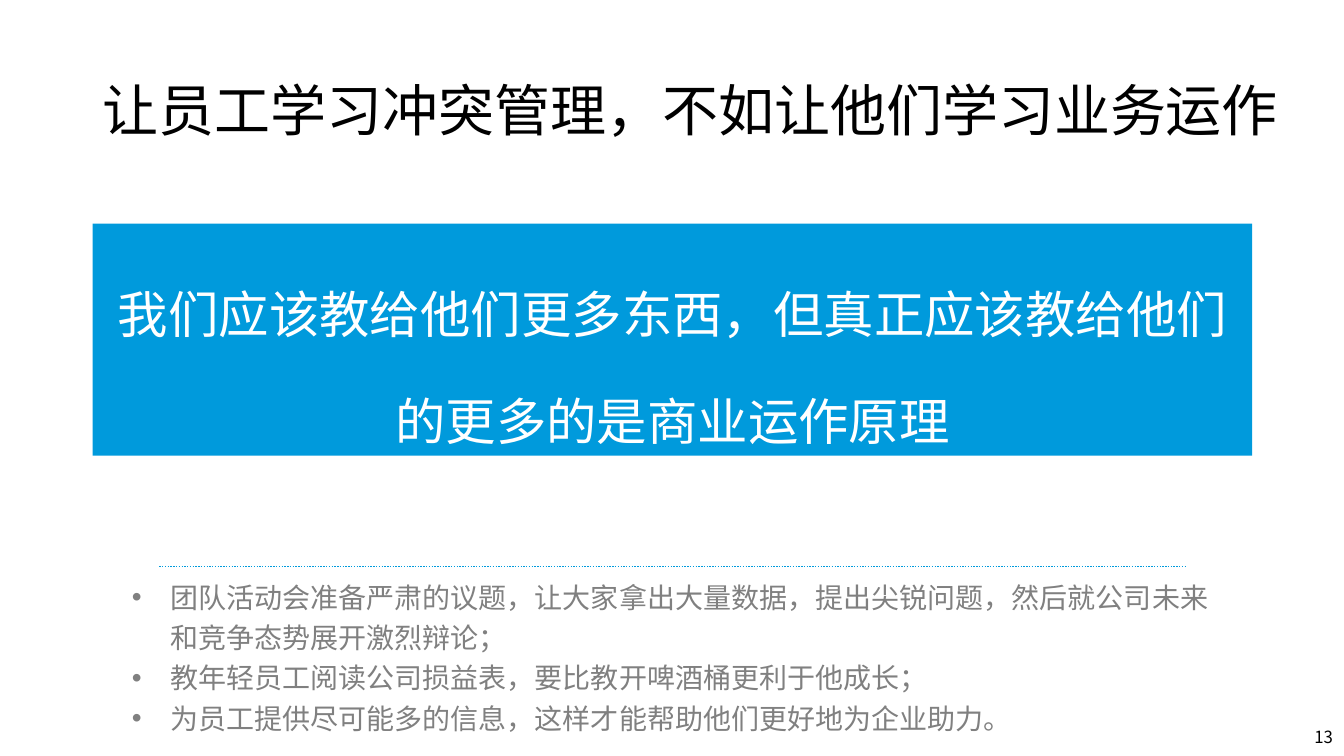
from lxml.etree import SubElement
from pptx import Presentation
from pptx.dml.color import RGBColor
from pptx.enum.dml import MSO_LINE
from pptx.enum.shapes import MSO_CONNECTOR, MSO_SHAPE
from pptx.enum.text import MSO_ANCHOR, MSO_AUTO_SIZE, PP_ALIGN
from pptx.oxml.ns import qn
from pptx.util import Inches, Pt

WIDTH, HEIGHT = Inches(13.33), Inches(7.5)
LEFT = 0.92
BLUE = "009ADC"
CJK_FONT = "Noto Sans CJK SC"
POINTS = [
    "团队活动会准备严肃的议题，让大家拿出大量数据，提出尖锐问题，然后就公司未来和竞争态势展开激烈辩论；",
    "教年轻员工阅读公司损益表，要比教开啤酒桶更利于他成长；",
    "为员工提供尽可能多的信息，这样才能帮助他们更好地为企业助力。",
]


def color(value):
    return RGBColor.from_string(value)


def inches(*lengths):
    return [Inches(length) for length in lengths]


def style(paragraph, size, ink, align=PP_ALIGN.LEFT, spacing=None, face="Arial"):
    paragraph.alignment = align
    paragraph.line_spacing = spacing
    paragraph.font.size = Pt(size)
    paragraph.font.color.rgb = color(ink)
    paragraph.font.name = face
    defaults = paragraph._p.pPr.find(qn("a:defRPr"))
    SubElement(defaults, qn("a:ea")).set("typeface", CJK_FONT)


def add_bullet(paragraph, indent):
    properties = paragraph._p.get_or_add_pPr()
    properties.set("marL", str(indent))
    properties.set("indent", str(-indent))
    SubElement(properties, qn("a:buFont")).set("typeface", "Arial")
    SubElement(properties, qn("a:buChar")).set("char", "•")


def prepare(frame, anchor):
    frame.word_wrap = True
    frame.auto_size = MSO_AUTO_SIZE.NONE
    frame.vertical_anchor = anchor


def place_title(slide, box):
    title = slide.shapes.title
    title.left, title.top, title.width, title.height = inches(*box)
    prepare(title.text_frame, MSO_ANCHOR.MIDDLE)
    title.text_frame.text = "让员工学习冲突管理，不如让他们学习业务运作"
    style(title.text_frame.paragraphs[0], 40, "000000", spacing=0.9)


def add_banner(slide, box):
    banner = slide.shapes.add_shape(MSO_SHAPE.RECTANGLE, *inches(*box))
    banner.shadow.inherit = False
    banner.fill.solid()
    banner.fill.fore_color.rgb = color(BLUE)
    banner.line.fill.background()
    frame = banner.text_frame
    prepare(frame, MSO_ANCHOR.TOP)
    frame.margin_top = Inches(0.13)
    frame.text = "我们应该教给他们更多东西，但真正应该教给他们的更多的是商业运作原理"
    style(frame.paragraphs[0], 36, "FFFFFF", PP_ALIGN.CENTER, Pt(76.5))


def add_points(slide, box):
    left, top, width, height = box
    frame = slide.shapes.add_textbox(*inches(*box)).text_frame
    prepare(frame, MSO_ANCHOR.TOP)
    frame.margin_top = Inches(0.07)
    frame.text = "\n".join(POINTS)
    for point in frame.paragraphs:
        add_bullet(point, Inches(0.38))
        style(point, 20, "808080", spacing=Pt(28.8))

    rule_left, rule_right = left + 0.37, left + width - 0.48
    rule = slide.shapes.add_connector(
        MSO_CONNECTOR.STRAIGHT, *inches(rule_left, top, rule_right, top)
    )
    rule.line.color.rgb = color(BLUE)
    rule.line.width = Pt(1)
    rule.line.dash_style = MSO_LINE.ROUND_DOT
    SubElement(rule._element.spPr, qn("a:effectLst"))


def add_page_number(slide, box):
    frame = slide.shapes.add_textbox(*inches(*box)).text_frame
    prepare(frame, MSO_ANCHOR.MIDDLE)
    frame.text = "13"
    style(frame.paragraphs[0], 12, "000000", PP_ALIGN.RIGHT, face=CJK_FONT)


def main():
    deck = Presentation()
    deck.slide_width, deck.slide_height = WIDTH, HEIGHT
    slide = deck.slides.add_slide(deck.slide_layouts[5])
    place_title(slide, (LEFT, 0.4, 11.93, 1.45))
    add_page_number(slide, (10.32, 7.11, 3, 0.4))
    add_banner(slide, (LEFT, 2.22, 11.5, 2.3))
    add_points(slide, (1.21, 5.62, 11.02, 1.72))
    deck.save("out.pptx")


if __name__ == "__main__":
    main()
